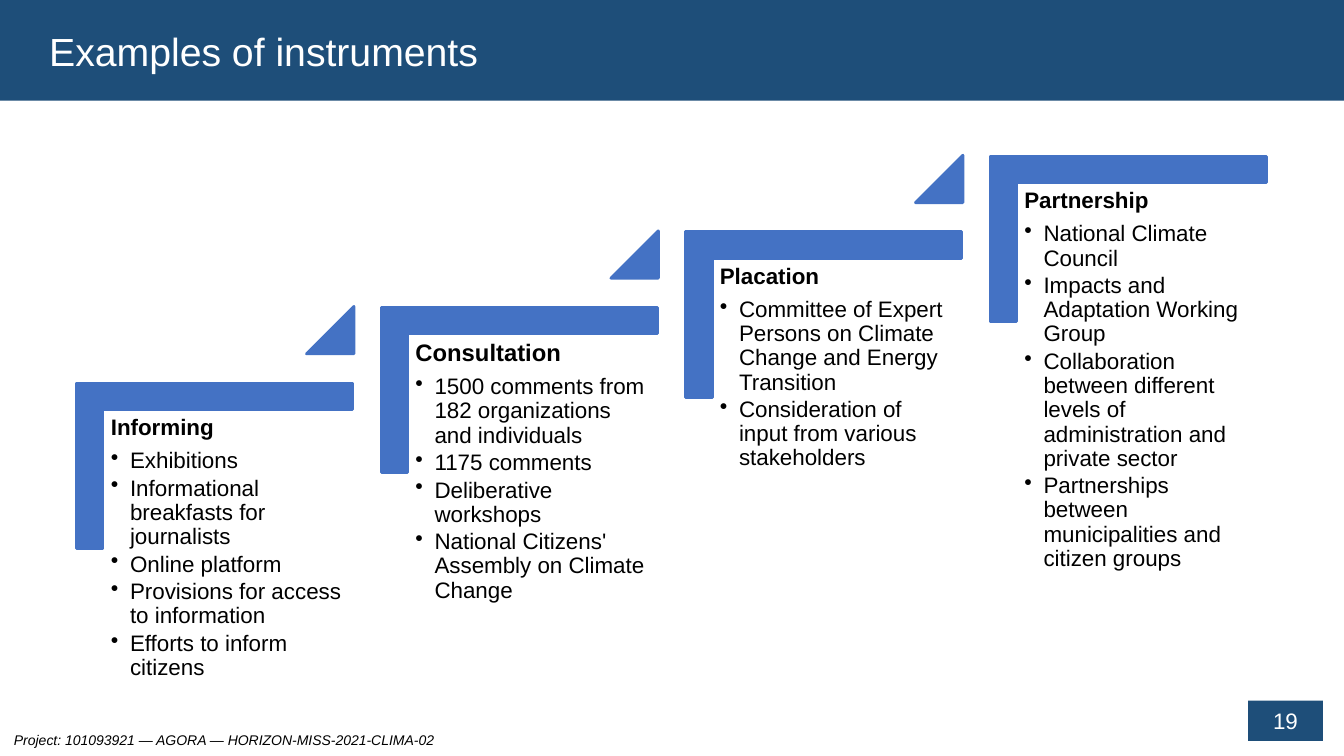
from lxml import etree
from pptx import Presentation
from pptx.dml.color import RGBColor
from pptx.enum.shapes import MSO_SHAPE
from pptx.enum.text import MSO_ANCHOR, PP_ALIGN
from pptx.oxml.ns import qn
from pptx.util import Inches, Pt

RECTANGLE = MSO_SHAPE.RECTANGLE
CORNER = MSO_SHAPE.CORNER
TRIANGLE = MSO_SHAPE.ISOSCELES_TRIANGLE
MIDDLE = MSO_ANCHOR.MIDDLE
LEFT, CENTER = PP_ALIGN.LEFT, PP_ALIGN.CENTER

NAVY, BLUE, WHITE, BLACK = "1E4E79", "4472C4", "FFFFFF", "000000"
STEP_X, STEP_Y = 3.02, 0.75
INDENT = Inches(0.19)

STAGES = [
    ("Informing", 16, [
        "Exhibitions",
        "Informational breakfasts for journalists",
        "Online platform",
        "Provisions for access to information",
        "Efforts to inform citizens",
    ]),
    ("Consultation", 17, [
        "1500 comments from 182 organizations and individuals",
        "1175 comments",
        "Deliberative workshops",
        "National Citizens' Assembly on Climate Change",
    ]),
    ("Placation", 16, [
        "Committee of Expert Persons on Climate Change and Energy Transition",
        "Consideration of input from various stakeholders",
    ]),
    ("Partnership", 16, [
        "National Climate Council",
        "Impacts and Adaptation Working Group",
        "Collaboration between different levels of administration and private sector",
        "Partnerships between municipalities and citizen groups",
    ]),
]


def add_solid(kind, left, top, width, height, color):
    shape = slide.shapes.add_shape(
        kind, Inches(left), Inches(top), Inches(width), Inches(height))
    shape.shadow.inherit = False
    shape.fill.solid()
    shape.fill.fore_color.rgb = RGBColor.from_string(color)
    shape.line.color.rgb = RGBColor.from_string(color)
    shape.line.width = Pt(2)
    return shape


def write(paragraph, text, size, color):
    paragraph.text = text
    paragraph.font.name = "Arial"
    paragraph.font.size = Pt(size)
    paragraph.font.color.rgb = RGBColor.from_string(color)


presentation = Presentation()
presentation.slide_width = Inches(13.33)
presentation.slide_height = Inches(7.5)
slide = presentation.slides.add_slide(presentation.slide_layouts[6])

for left, top, width, height, text, size, alignment, indent in [
    (12.38, 6.95, 0.74, 0.4, "19", 16, CENTER, 0),
    (0, 0, 13.33, 1, "Examples of instruments", 28, LEFT, 0.39),
]:
    banner = add_solid(RECTANGLE, left, top, width, height, NAVY)
    banner.line.fill.background()
    banner.text_frame.vertical_anchor = MIDDLE
    paragraph = banner.text_frame.paragraphs[0]
    paragraph.alignment = alignment
    paragraph._p.get_or_add_pPr().set("marL", str(Inches(indent)))
    write(paragraph, text, size, WHITE)

footer = slide.shapes.add_textbox(Inches(0.04), Inches(7.21), Inches(6.67), Inches(0.27))
footer.text_frame.word_wrap = True
paragraph = footer.text_frame.paragraphs[0]
write(paragraph, "Project: 101093921 — AGORA — HORIZON-MISS-2021-CLIMA-02", 10, BLACK)
paragraph.font.italic = True

for index, (heading, heading_size, examples) in enumerate(STAGES):
    shift, rise = index * STEP_X, index * STEP_Y

    corner = add_solid(CORNER, 1.31 + shift, 3.25 - rise, 1.64, 2.74, BLUE)
    corner.rotation = 90
    corner.adjustments[0] = corner.adjustments[1] = 0.16

    box = slide.shapes.add_textbox(
        Inches(1.03 + shift), Inches(4.06 - rise), Inches(2.47), Inches(2.17))
    frame = box.text_frame
    frame.word_wrap = True
    frame.margin_left = frame.margin_right = Inches(0.07)
    frame.margin_top = frame.margin_bottom = Inches(0.07)
    paragraph = frame.paragraphs[0]
    paragraph.line_spacing = 0.9
    paragraph.space_after = Pt(6.4)
    write(paragraph, heading, heading_size, BLACK)
    paragraph.font.bold = True

    for example in examples:
        paragraph = frame.add_paragraph()
        paragraph.level = 1
        paragraph.line_spacing = 0.9
        paragraph.space_after = Pt(2.4)
        properties = paragraph._p.get_or_add_pPr()
        properties.set("marL", str(INDENT))
        properties.set("indent", str(-INDENT))
        etree.SubElement(properties, qn("a:buChar")).set("char", "•")
        write(paragraph, example, 16, BLACK)

    if index < len(STAGES) - 1:
        triangle = add_solid(TRIANGLE, 3.04 + shift, 3.04 - rise, 0.47, 0.47, BLUE)
        triangle.adjustments[0] = 1

presentation.save("out.pptx")
